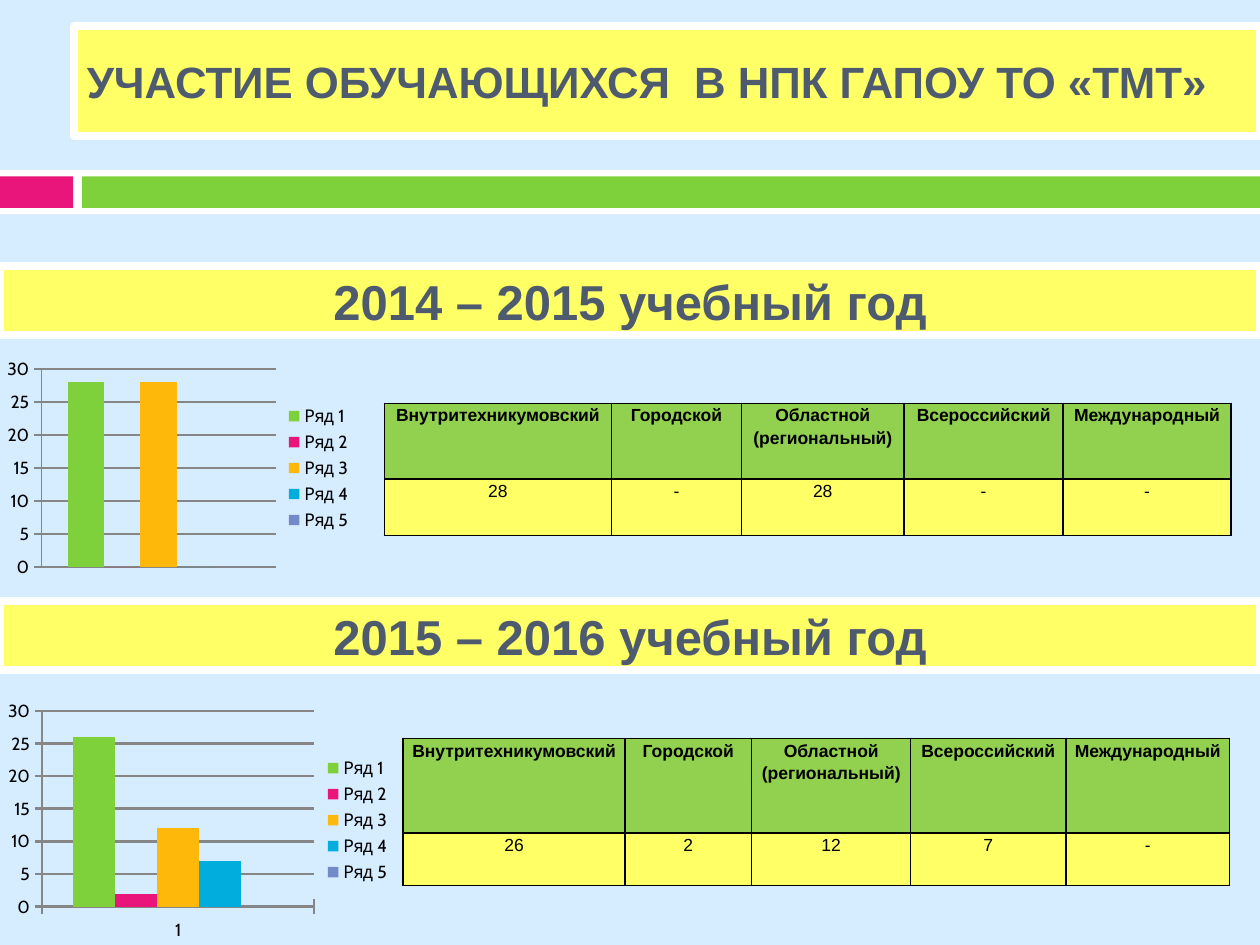
from lxml import etree
from pptx import Presentation
from pptx import util as u
from pptx.chart.data import CategoryChartData
from pptx.dml.color import RGBColor
from pptx.enum import chart as ch, shapes, text
from pptx.oxml import ns

W, H = u.Inches(10), u.Inches(7.5)
YELLOW, GREEN, WHITE, BLACK, SLATE, GREY = "FFFF66", "92D050", "FFFFFF", "000000", "4E5B6F", "868686"
SERIES = ["7FD13B", "EA157A", "FEB80A", "00ADDC", "738AC8"]
LEVELS = ["Внутритехникумовский", "Городской", "Областной (региональный)",
          "Всероссийский", "Международный"]
COLUMN_SHARES = [18, 10.3, 12.9, 12.6, 13.3]
CENTER = text.PP_ALIGN.CENTER
YEARS = [
    {"title": "2014 – 2015 учебный год", "values": [28, 0, 28, 0, 0], "banner_top": 28.13,
     "chart": (0, 37.47, 28.9, 24.13), "table": (30.5, 42.67, 67.2), "rows": (8, 6),
     "show_category": False, "line": 0.75},
    {"title": "2015 – 2016 учебный год", "values": [26, 2, 12, 7, 0], "banner_top": 63.6,
     "chart": (0, 73.6, 32, 26.4), "table": (32, 78.13, 65.6), "rows": (10, 5.6),
     "show_category": True, "line": 1.5},
]


def rgb(value):
    return RGBColor.from_string(value)


def across(percent):
    return round(W * percent / 100)


def down(percent):
    return round(H * percent / 100)


def place(left, top, width, height):
    return across(left), down(top), across(width), down(height)


def assign(obj, values):
    for name, value in values.items():
        setattr(obj, name, value)


def paint(target, color):
    target.fill.solid()
    target.fill.fore_color.rgb = rgb(color)


def set_font(font, size, color, name="Arial", bold=False):
    assign(font, {"name": name, "size": u.Pt(size), "bold": bold})
    font.color.rgb = rgb(color)


def write(tf, words, size, color, bold, **paragraph):
    p = tf.paragraphs[0]
    assign(p, paragraph)
    r = p.add_run()
    r.text = words
    set_font(r.font, size, color, bold=bold)


def add_bar(s, area, color):
    sp = s.shapes.add_shape(shapes.MSO_SHAPE.RECTANGLE, *place(*area))
    sp.shadow.inherit = False
    paint(sp, color)
    sp.line.fill.background()
    return sp


def add_banner(s, area, words, size, align):
    sp = add_bar(s, area, YELLOW)
    sp.line.color.rgb = rgb(WHITE)
    sp.line.width = u.Pt(4.5)
    assign(sp.text_frame, {"word_wrap": True, "vertical_anchor": text.MSO_ANCHOR.MIDDLE})
    write(sp.text_frame, words, size, SLATE, True, alignment=align)


def add_borders(cell):
    props = cell._tc.get_or_add_tcPr()
    for i, side in enumerate(("a:lnL", "a:lnR", "a:lnT", "a:lnB")):
        line = etree.Element(ns.qn(side), w=str(u.Pt(1)))
        fill = etree.SubElement(line, ns.qn("a:solidFill"))
        etree.SubElement(fill, ns.qn("a:srgbClr"), val=BLACK)
        props.insert(i, line)


def add_results(s, year):
    left, top, width = year["table"]
    rows = [LEVELS, [str(v) if v else "-" for v in year["values"]]]
    frame = s.shapes.add_table(len(rows), len(LEVELS), *place(left, top, width, sum(year["rows"])))
    table = frame.table
    for column, share in zip(table.columns, COLUMN_SHARES):
        column.width = across(width * share / sum(COLUMN_SHARES))
    for i, words in enumerate(rows):
        table.rows[i].height = down(year["rows"][i])
        for j, word in enumerate(words):
            cell = table.cell(i, j)
            assign(cell, {"margin_left": u.Inches(0.07), "margin_right": u.Inches(0.07),
                          "margin_top": 0, "margin_bottom": 0})
            paint(cell, YELLOW if i else GREEN)
            add_borders(cell)
            write(cell.text_frame, word, 10, BLACK, i == 0, alignment=CENTER, line_spacing=1.15)


def add_columns(s, year):
    data = CategoryChartData()
    data.categories = ["1"]
    for i, value in enumerate(year["values"], 1):
        data.add_series(f"Ряд {i}", [value])
    chart = s.shapes.add_chart(ch.XL_CHART_TYPE.COLUMN_CLUSTERED, *place(*year["chart"]), data).chart
    set_font(chart.font, 10, BLACK, "Cabin")
    assign(chart, {"has_title": False, "has_legend": True})
    assign(chart.legend, {"position": ch.XL_LEGEND_POSITION.RIGHT, "include_in_layout": False})
    values, categories = chart.value_axis, chart.category_axis
    assign(values, {"minimum_scale": 0, "maximum_scale": 30, "major_unit": 5,
                    "has_major_gridlines": True})
    categories.visible = year["show_category"]
    for axis in (values, categories):
        axis.major_tick_mark = ch.XL_TICK_MARK.CROSS
    for line in (values.format.line, categories.format.line, values.major_gridlines.format.line):
        line.color.rgb = rgb(GREY)
        line.width = u.Pt(year["line"])
    plot = chart.plots[0]
    assign(plot, {"gap_width": 150, "overlap": 0, "vary_by_categories": False})
    for series, color in zip(plot.series, SERIES):
        paint(series.format, color)
        series.invert_if_negative = False


def main():
    prs = Presentation()
    assign(prs, {"slide_width": W, "slide_height": H})
    s = prs.slides.add_slide(prs.slide_layouts[6])
    paint(s.background, "D6ECFF")
    add_bar(s, (0, 18, 100, 4.67), WHITE)
    add_bar(s, (0, 18.67, 5.8, 3.33), SERIES[1])
    add_bar(s, (6.5, 18.67, 93.5, 3.33), SERIES[0])
    add_banner(s, (5.9, 2.8, 94.1, 11.6), "УЧАСТИЕ ОБУЧАЮЩИХСЯ  В НПК ГАПОУ ТО «ТМТ»",
               25, text.PP_ALIGN.LEFT)
    for year in YEARS:
        add_banner(s, (0, year["banner_top"], 100, 7.33), year["title"], 28, CENTER)
        add_results(s, year)
        add_columns(s, year)
    prs.save("out.pptx")


if __name__ == "__main__":
    main()
